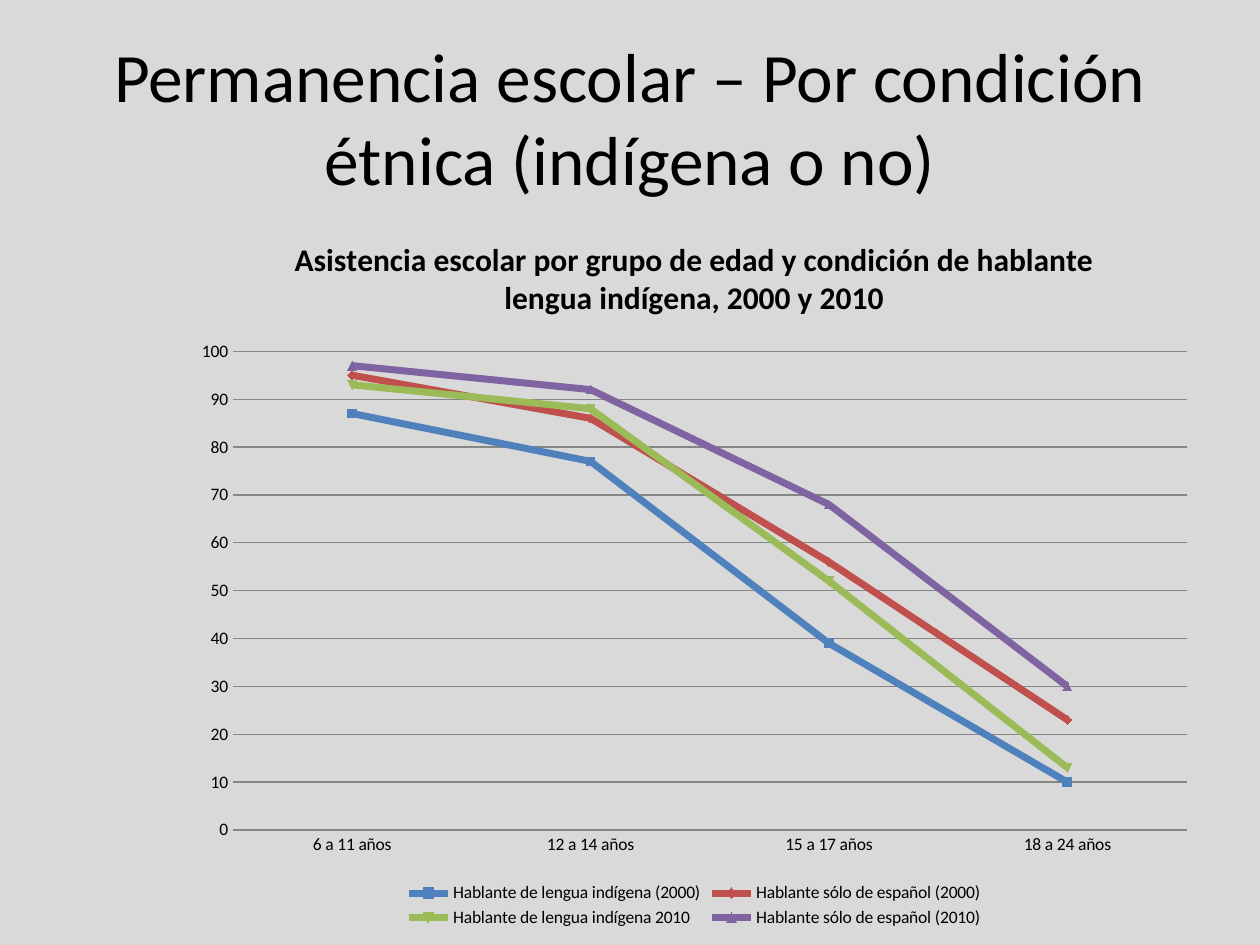
from dataclasses import dataclass

from pptx import Presentation
from pptx.chart.data import CategoryChartData
from pptx.dml.color import RGBColor
from pptx.enum.chart import XL_CHART_TYPE, XL_LEGEND_POSITION, XL_TICK_MARK
from pptx.enum.text import MSO_ANCHOR, PP_ALIGN
from pptx.util import Inches, Pt

LINE_MARKERS = XL_CHART_TYPE.LINE_MARKERS
LEGEND_BOTTOM = XL_LEGEND_POSITION.BOTTOM
NO_TICK = XL_TICK_MARK.NONE
MIDDLE = MSO_ANCHOR.MIDDLE
CENTER = PP_ALIGN.CENTER

WIDTH, HEIGHT = Inches(10), Inches(7.5)
FONT = "Calibri"
COLORS = {
    "background": "D9D9D9",
    "text": "000000",
    "grid": "868686",
    "blue": "4F81BD",
    "red": "C0504D",
    "green": "9BBB59",
    "purple": "8064A2",
}


@dataclass(frozen=True)
class Box:
    left: float
    top: float
    width: float
    height: float

    def emu(self) -> tuple[int, int, int, int]:
        return (int(self.left * WIDTH), int(self.top * HEIGHT),
                int(self.width * WIDTH), int(self.height * HEIGHT))


@dataclass(frozen=True)
class Group:
    name: str
    attendance: tuple[int, ...]
    color: str


HEADING_BOX = Box(0.05, 0.04, 0.9, 1 / 6)
CHART_BOX = Box(0.144, 0.223, 0.814, 0.764)
HEADING = "Permanencia escolar – Por condición étnica (indígena o no)"
CHART_TITLE = ("Asistencia escolar por grupo de edad y condición de hablante "
               "lengua indígena, 2000 y 2010")
AGES = ("6 a 11 años", "12 a 14 años", "15 a 17 años", "18 a 24 años")
GROUPS = (
    Group("Hablante de lengua indígena (2000)", (87, 77, 39, 10), "blue"),
    Group("Hablante sólo de español (2000)", (95, 86, 56, 23), "red"),
    Group("Hablante de lengua indígena 2010", (93, 88, 52, 13), "green"),
    Group("Hablante sólo de español (2010)", (97, 92, 68, 30), "purple"),
)


def rgb(name: str) -> RGBColor:
    return RGBColor.from_string(COLORS[name])


def set_font(font, size: float, bold: bool = False) -> None:
    font.name = FONT
    font.size = Pt(size)
    font.bold = bold
    font.color.rgb = rgb("text")


def set_line(line, color: str, width: float) -> None:
    line.color.rgb = rgb(color)
    line.width = Pt(width)


def add_heading(slide) -> None:
    heading = slide.shapes.title
    heading.left, heading.top, heading.width, heading.height = HEADING_BOX.emu()
    frame = heading.text_frame
    frame.text = HEADING
    frame.word_wrap = True
    frame.vertical_anchor = MIDDLE
    paragraph = frame.paragraphs[0]
    paragraph.alignment = CENTER
    set_font(paragraph.font, 39.6)


def style_axes(chart) -> None:
    ages, percent = chart.category_axis, chart.value_axis
    for axis in (ages, percent):
        axis.major_tick_mark = NO_TICK
        axis.minor_tick_mark = NO_TICK
    set_line(ages.format.line, "grid", 0.75)
    percent.minimum_scale, percent.maximum_scale = 0, 100
    percent.major_unit = 10
    percent.format.line.fill.background()
    set_line(percent.major_gridlines.format.line, "grid", 0.75)


def add_attendance_chart(slide) -> None:
    data = CategoryChartData(number_format="0")
    data.categories = AGES
    for group in GROUPS:
        data.add_series(group.name, group.attendance)
    chart = slide.shapes.add_chart(LINE_MARKERS, *CHART_BOX.emu(), data).chart
    set_font(chart.font, 10)

    chart.has_title = True
    chart.chart_title.include_in_layout = False
    title = chart.chart_title.text_frame
    title.text = CHART_TITLE
    set_font(title.paragraphs[0].font, 18, bold=True)

    chart.has_legend = True
    chart.legend.position = LEGEND_BOTTOM
    chart.legend.include_in_layout = False

    style_axes(chart)
    plot = chart.plots[0]
    plot.vary_by_categories = False
    for series, group in zip(plot.series, GROUPS):
        series.smooth = False
        set_line(series.format.line, group.color, 4)


def main() -> None:
    deck = Presentation()
    deck.slide_width, deck.slide_height = WIDTH, HEIGHT
    slide = deck.slides.add_slide(deck.slide_layouts.get_by_name("Title Only"))
    background = slide.background.fill
    background.solid()
    background.fore_color.rgb = rgb("background")
    add_heading(slide)
    add_attendance_chart(slide)
    deck.save("out.pptx")


if __name__ == "__main__":
    main()
